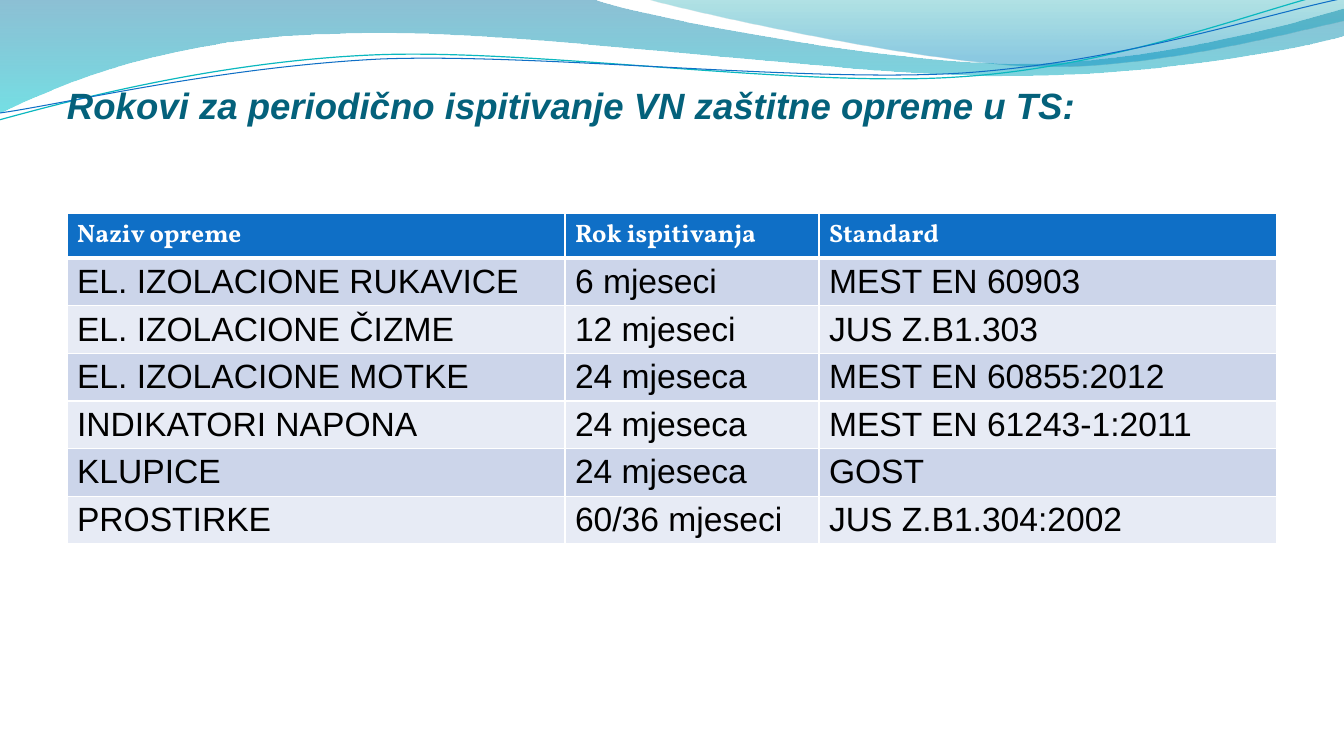
from dataclasses import dataclass
from typing import Optional

from lxml.etree import SubElement
from pptx import Presentation
from pptx.dml.color import RGBColor
from pptx.enum.text import MSO_ANCHOR, MSO_AUTO_SIZE, PP_ALIGN
from pptx.oxml import parse_xml
from pptx.oxml.ns import nsdecls, qn
from pptx.util import Emu, Pt

PX = 914400 / 100.8

WHITE = RGBColor(0xFF, 0xFF, 0xFF)
BLACK = RGBColor(0, 0, 0)
TITLE_TEAL = RGBColor(0x04, 0x61, 0x7B)
BLUE = RGBColor(0x0F, 0x6F, 0xC6)
TURQUOISE = RGBColor(0x0A, 0xB8, 0xBF)
BAND_DARK = RGBColor(0xCC, 0xD5, 0xEA)
BAND_LIGHT = RGBColor(0xE7, 0xEB, 0xF5)
WAVE_BLUE = RGBColor(0x00, 0x74, 0xA1)
WAVE_CYAN = RGBColor(0x00, 0xC6, 0xCF)
CREST_TEAL = RGBColor(0x00, 0xA1, 0xA9)
CREST_BLUE = RGBColor(0x00, 0x8B, 0xBF)

Point = tuple[int, int]


@dataclass
class Stop:
    position: float
    color: RGBColor
    opacity: int


@dataclass
class Wave:
    """A segment of one point is a straight line; one of three is a Bezier curve."""
    start: Point
    segments: list[tuple[Point, ...]]
    stops: tuple[Stop, ...] = ()
    line: Optional[RGBColor] = None
    width: float = 0


WAVES = [
    Wave((0, 0), [
        ((592, -1),),
        ((639, 17), (892, 64), (1019, 64)),
        ((1146, 64), (1288, 26), (1344, 9)),
        ((1346, 36),),
        ((1321, 44), (1169, 77), (1002, 76)),
        ((836, 76), (513, 28), (346, 34)),
        ((173, 36), (61, 84), (-1, 114)),
        ((0, 0),),
    ], stops=(Stop(0, WAVE_BLUE, 45), Stop(1, WAVE_CYAN, 55))),
    Wave((644, -1), [
        ((684, 11), (916, 62), (1033, 66)),
        ((1150, 70), (1292, 32), (1344, 21)),
        ((1344, 0),),
        ((644, -1),),
    ], stops=(Stop(0, CREST_TEAL, 30), Stop(0.8, CREST_BLUE, 45))),
    Wave((-1, 120), [
        ((65, 102), (213, 62), (372, 55)),
        ((531, 48), (796, 88), (958, 77)),
        ((1119, 67), (1262, 8), (1342, -10)),
    ], line=TURQUOISE, width=0.85),
    Wave((0, 113), [
        ((64, 104), (220, 67), (381, 59)),
        ((541, 53), (802, 83), (963, 73)),
        ((1124, 62), (1265, 14), (1345, -2)),
    ], line=BLUE, width=0.75),
]

TITLE = "Rokovi za periodično ispitivanje VN zaštitne opreme u TS:"
COLUMNS = (498, 254, 458)
ROW_HEIGHT = 41
ROWS = [
    ("Naziv opreme", "Rok ispitivanja", "Standard"),
    ("EL. IZOLACIONE RUKAVICE", "6 mjeseci", "MEST EN 60903"),
    ("EL. IZOLACIONE ČIZME", "12 mjeseci", "JUS Z.B1.303"),
    ("EL. IZOLACIONE MOTKE", "24 mjeseca", "MEST EN 60855:2012"),
    ("INDIKATORI NAPONA", "24 mjeseca", "MEST EN 61243-1:2011"),
    ("KLUPICE", "24 mjeseca", "GOST"),
    ("PROSTIRKE", "60/36 mjeseci", "JUS Z.B1.304:2002"),
]
TITLE_FONT = {"name": "Arial", "size": Pt(26.1), "bold": True, "italic": True}
HEADER_FONT = {"name": "Vollkorn", "size": Pt(18), "bold": True}
BODY_FONT = {"name": "Arial", "size": Pt(24), "bold": False}


def emu(px: float) -> Emu:
    return Emu(round(px * PX))


def set_attrs(target, values: dict) -> None:
    for name, value in values.items():
        setattr(target, name, value)


def write(p, text: str, font: dict, color: RGBColor) -> None:
    r = p.add_run()
    r.text = text
    set_attrs(r.font, font)
    r.font.color.rgb = color


def bend(sp, segments: list[tuple[Point, ...]]) -> None:
    """Turn each run of three straight steps of a curved segment into one Bezier step."""
    steps = iter(list(sp.element.spPr.iter(qn("a:lnTo"))))
    for segment in segments:
        group = [next(steps) for _ in segment]
        if len(group) == 3:
            curve = parse_xml(f'<a:cubicBezTo {nsdecls("a")}/>')
            group[0].addprevious(curve)
            for step in group:
                curve.append(step[0])
                step.getparent().remove(step)


def add_wave(s, wave: Wave) -> None:
    builder = s.shapes.build_freeform(*map(emu, wave.start))
    builder.add_line_segments(
        [(emu(x), emu(y)) for segment in wave.segments for x, y in segment],
        close=bool(wave.stops))
    sp = builder.convert_to_shape()
    bend(sp, wave.segments)
    sp.shadow.inherit = False
    if wave.line is not None:
        sp.fill.background()
        sp.line.color.rgb = wave.line
        sp.line.width = Pt(wave.width)
        return
    sp.line.fill.background()
    sp.fill.gradient()
    sp.fill.gradient_angle = 270
    for gradient_stop, stop in zip(sp.fill.gradient_stops, wave.stops):
        gradient_stop.color.rgb = stop.color
        gradient_stop.position = stop.position
    for color, stop in zip(sp.element.spPr.iter(qn("a:srgbClr")), wave.stops):
        SubElement(color, qn("a:alpha"), val=str(stop.opacity * 1000))


def set_borders(cell, bottom: float) -> None:
    tc_pr = cell._tc.get_or_add_tcPr()
    for i, (side, width) in enumerate({"L": 1, "R": 1, "T": 1, "B": bottom}.items()):
        tc_pr.insert(i, parse_xml(
            f'<a:ln{side} {nsdecls("a")} w="{Pt(width)}"><a:solidFill>'
            f'<a:srgbClr val="{WHITE}"/></a:solidFill></a:ln{side}>'))


def add_equipment_table(s) -> None:
    frame = s.shapes.add_table(len(ROWS), len(COLUMNS), emu(67), emu(213),
                               emu(sum(COLUMNS)), emu(ROW_HEIGHT * len(ROWS)))
    table = frame.table
    table.horz_banding = False
    for column, width in zip(table.columns, COLUMNS):
        column.width = emu(width)
    for i, texts in enumerate(ROWS):
        header = i == 0
        fill = BLUE if header else BAND_DARK if i % 2 else BAND_LIGHT
        for cell, text in zip(table.rows[i].cells, texts):
            cell.fill.solid()
            cell.fill.fore_color.rgb = fill
            set_borders(cell, 3 if header else 1)
            write(cell.text_frame.paragraphs[0], text,
                  HEADER_FONT if header else BODY_FONT, WHITE if header else BLACK)
    frame.height = emu(344)


def format_title(s) -> None:
    title = s.shapes.title
    set_attrs(title, {"left": emu(67), "top": emu(89),
                      "width": emu(1210), "height": emu(116)})
    tf = title.text_frame
    set_attrs(tf, {"margin_left": 0, "margin_right": 0, "margin_top": 0,
                   "margin_bottom": 0, "word_wrap": True,
                   "vertical_anchor": MSO_ANCHOR.TOP, "auto_size": MSO_AUTO_SIZE.NONE})
    p = tf.paragraphs[0]
    set_attrs(p, {"alignment": PP_ALIGN.LEFT, "line_spacing": 0.88})
    write(p, TITLE, TITLE_FONT, TITLE_TEAL)
    title.element.getparent().append(title.element)  # bring above the waves


def main() -> None:
    prs = Presentation()
    prs.slide_width, prs.slide_height = emu(1344), emu(756)
    s = prs.slides.add_slide(prs.slide_layouts[5])
    for wave in WAVES:
        add_wave(s, wave)
    format_title(s)
    add_equipment_table(s)
    prs.save("out.pptx")


if __name__ == "__main__":
    main()
